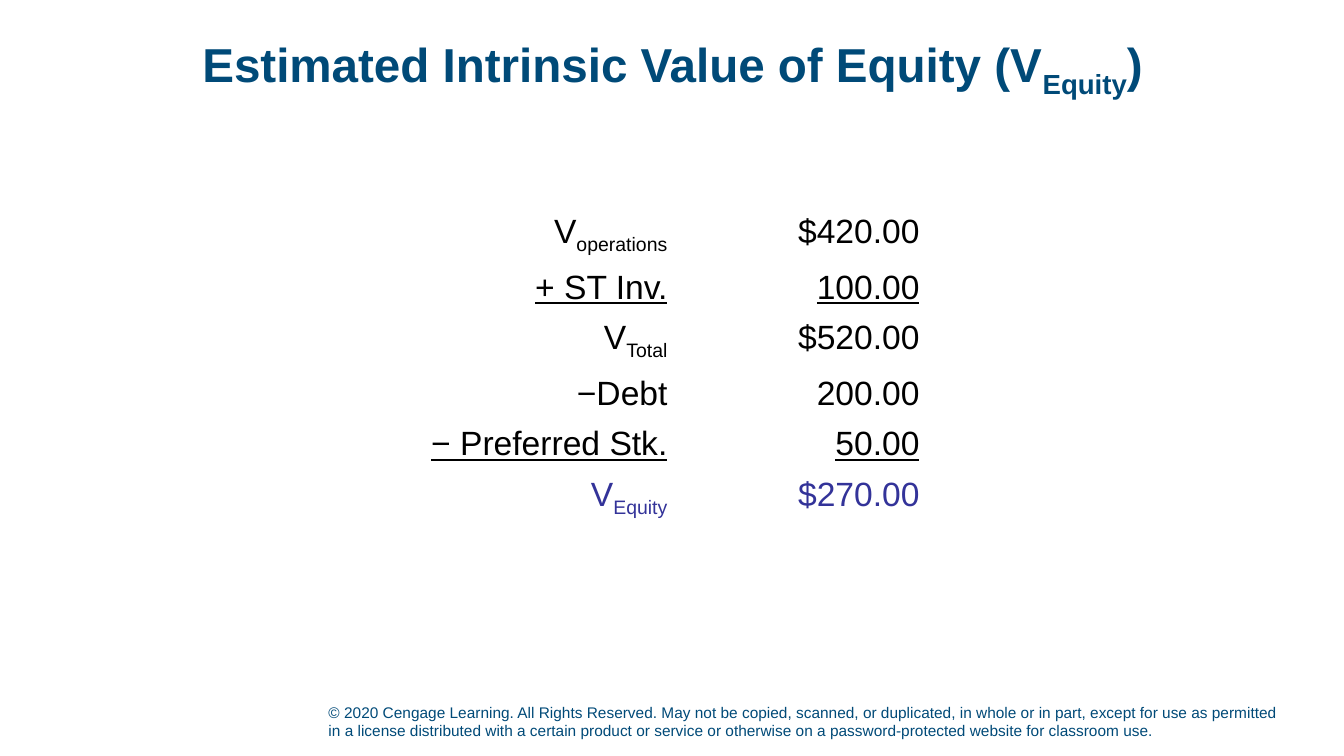
from pptx import Presentation
from pptx.dml.color import RGBColor
from pptx.enum.text import MSO_ANCHOR, MSO_AUTO_SIZE, PP_ALIGN
from pptx.util import Inches, Pt

COLORS = {"heading": "004A78", "body": "000000", "equity": "333399"}
TITLE_FONT = {"name": "Arial", "size": Pt(34), "bold": True}
AMOUNT_FONT = {"name": "Arial", "size": Pt(24), "bold": False}
NOTICE_FONT = {"name": "Arial", "size": Pt(11)}
VALUATION = [
    (["V", "operations"], "$420.00", "body", False),
    (["+ ST Inv."], "100.00", "body", True),
    (["V", "Total"], "$520.00", "body", False),
    (["−Debt"], "200.00", "body", False),
    (["− Preferred Stk."], "50.00", "body", True),
    (["V", "Equity"], "$270.00", "equity", False),
]
NOTICE = (
    "© 2020 Cengage Learning. All Rights Reserved. May not be copied, scanned, "
    "or duplicated, in whole or in part, except for use as permitted in a license "
    "distributed with a certain product or service or otherwise on a "
    "password-protected website for classroom use."
)


def apply_format(target, values):
    """Set each attribute of the target from a dict."""
    for attribute, value in values.items():
        setattr(target, attribute, value)


def write_pieces(paragraph, pieces, font_format, color):
    """Write pieces as runs, every second one as a subscript."""
    for position, piece in enumerate(pieces):
        run = paragraph.add_run()
        run.text = piece
        apply_format(run.font, font_format)
        run.font.color.rgb = RGBColor.from_string(COLORS[color])
        if position % 2:
            run.font._element.set("baseline", "-25000")


def add_title(slide, left, top, width, height):
    """Place the heading in the title placeholder."""
    heading = slide.shapes.title
    apply_format(heading, {"left": left, "top": top, "width": width, "height": height})
    apply_format(heading.text_frame, {
        "word_wrap": True,
        "auto_size": MSO_AUTO_SIZE.NONE,
        "vertical_anchor": MSO_ANCHOR.MIDDLE,
    })
    paragraph = heading.text_frame.paragraphs[0]
    apply_format(paragraph, {"alignment": PP_ALIGN.CENTER, "line_spacing": 0.95})
    pieces = ["Estimated Intrinsic Value of Equity (V", "Equity", ")"]
    write_pieces(paragraph, pieces, TITLE_FONT, "heading")


def add_valuation(slide, left, top, width, height):
    """Place the table that leads from operations to equity value."""
    frame = slide.shapes.add_table(len(VALUATION), 2, left, top, width, height)
    valuation = frame.table
    apply_format(valuation, {"first_row": False, "horz_banding": False})
    valuation.columns[0].width = Inches(2.6)
    valuation.columns[1].width = width - Inches(2.6)
    for row, (label, amount, color, underline) in zip(valuation.rows, VALUATION):
        row.height = Inches(0.41)
        for cell, pieces in zip(row.cells, (label, [amount])):
            cell.fill.background()
            paragraph = cell.text_frame.paragraphs[0]
            paragraph.alignment = PP_ALIGN.RIGHT
            write_pieces(paragraph, pieces, {**AMOUNT_FONT, "underline": underline}, color)
    frame.height = height


def add_notice(slide, left, top, width, height):
    """Place the copyright line at the foot."""
    notice = slide.shapes.add_textbox(left, top, width, height).text_frame
    apply_format(notice, {"word_wrap": True, "vertical_anchor": MSO_ANCHOR.BOTTOM})
    write_pieces(notice.paragraphs[0], [NOTICE], NOTICE_FONT, "heading")


def main():
    """Build and save the slide."""
    deck = Presentation()
    apply_format(deck, {"slide_width": Inches(13.33), "slide_height": Inches(7.5)})
    slide = deck.slides.add_slide(deck.slide_layouts.get_by_name("Title Only"))
    add_notice(slide, Inches(3.16), Inches(6.89), Inches(9.63), Inches(0.5))
    add_title(slide, Inches(0.92), Inches(0.15), Inches(11.5), Inches(1))
    add_valuation(slide, Inches(4.12), Inches(2.06), Inches(5.1), Inches(3))
    deck.save("out.pptx")


if __name__ == "__main__":
    main()
